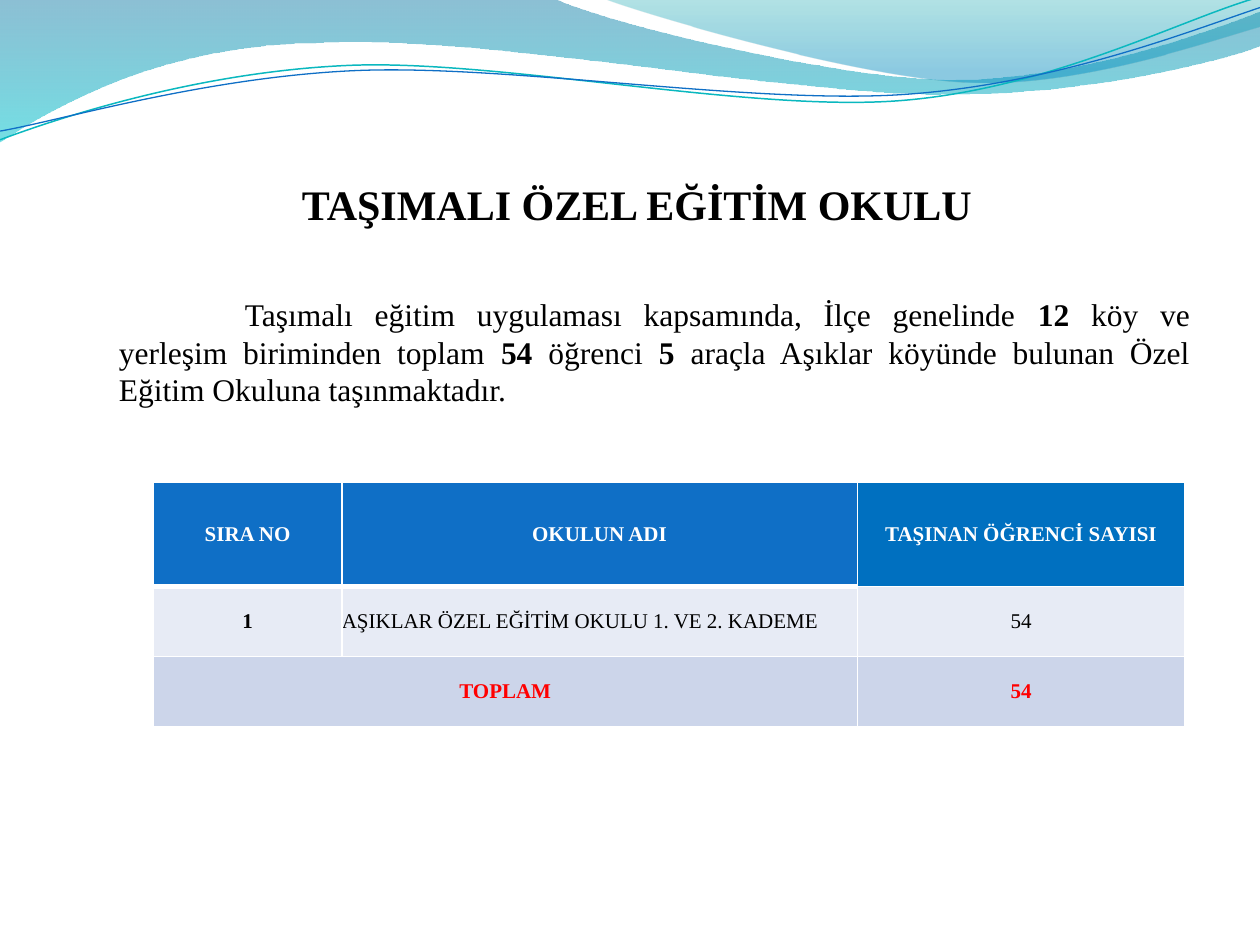
from lxml import etree
from pptx import Presentation
from pptx import util as u
from pptx.dml.color import RGBColor
from pptx.enum import text
from pptx.oxml.ns import qn

FONT = "Times New Roman"
BLACK = RGBColor(0, 0, 0)
WHITE = RGBColor(255, 255, 255)
RED = RGBColor(255, 0, 0)
TEAL = RGBColor(0x0A, 0xB8, 0xBF)
BLUE = RGBColor(0x0F, 0x6F, 0xC6)
ACCENT = RGBColor(0x00, 0x70, 0xC0)
PALE = RGBColor(0xE7, 0xEB, 0xF5)
LILAC = RGBColor(0xCC, 0xD5, 0xEA)
BAND_STOPS = [(0, RGBColor(0, 0x74, 0xA1), 45), (1, RGBColor(0, 0xC6, 0xCF), 55)]
CREST_STOPS = [(0, RGBColor(0, 0xA1, 0xA9), 30), (0.8, RGBColor(0, 0x8B, 0xBF), 45)]

BAND = [(0, -0.7), (316.8, -0.7), (342.7, 12.2, 478.1, 45.4, 545.8, 45.4),
        (614.2, 45.4, 689.8, 18.7, 720, 6.5), (720.7, 25.9),
        (707.8, 31.7, 626.4, 54.7, 537.1, 54), (447.8, 54, 275, 20.2, 185, 24.5),
        (92.9, 25.2, 33.1, 59.8, -0.7, 81.4)]
CREST = [(344.9, -0.7), (366.5, 7.9, 491, 44.6, 553.7, 46.8),
         (616.3, 49.7, 691.9, 23, 720, 15.1), (720, 0)]
TEAL_CURVE = [(0, 79.9), (34.6, 67, 113.8, 41, 199.4, 37.4),
              (284.4, 33.8, 427, 64.1, 513.4, 57.6), (599.8, 51.1, 675.4, 10.8, 718.6, -1.4)]
BLUE_CURVE = [(0, 74.9), (33.8, 69.1, 118.1, 43.9, 203.8, 40.3),
              (290.2, 36.7, 429.8, 59.8, 516.2, 54), (601.9, 48.2, 675.4, 19.4, 720, 4.3)]


def add_outline(page, segments, close):
    """Add a freeform of straight lines (2 numbers) and cubic curves (6 numbers)."""
    points = [(u.Pt(x), u.Pt(y)) for segment in segments
              for x, y in zip(segment[::2], segment[1::2])]
    builder = page.shapes.build_freeform(*points[0], scale=1.0)
    builder.add_line_segments(points[1:], close=close)
    shape = builder.convert_to_shape()
    shape.shadow.inherit = False
    lines = iter(list(shape._element.spPr.iter(qn("a:lnTo"))))
    for segment in segments[1:]:
        first = next(lines)
        if len(segment) == 6:
            first.tag = qn("a:cubicBezTo")
            for line in (next(lines), next(lines)):
                first.append(line[0])
                line.getparent().remove(line)
    return shape


def add_wave(page, segments, stops):
    """Add a closed wave with a translucent vertical gradient."""
    shape = add_outline(page, segments, True)
    shape.line.fill.background()
    shape.fill.gradient()
    shape.fill.gradient_angle = 270
    for stop, (position, color, _) in zip(shape.fill.gradient_stops, stops):
        stop.position = position
        stop.color.rgb = color
    colors = shape._element.spPr.iter(qn("a:srgbClr"))
    for element, (_, _, opacity) in zip(colors, stops):
        etree.SubElement(element, qn("a:alpha"), val=str(opacity * 1000))


def add_curve(page, segments, color, width):
    """Add an open curved line."""
    shape = add_outline(page, segments, False)
    shape.fill.background()
    shape.line.color.rgb = color
    shape.line.width = u.Pt(width)


def format_font(font, size, color=BLACK, bold=None):
    """Set the typeface, size, colour and weight of a font."""
    font.name = FONT
    font.size = u.Pt(size)
    font.color.rgb = color
    font.bold = bold


def clear_margins(target):
    """Remove the inner margins of a text frame or cell."""
    target.margin_left = target.margin_right = 0
    target.margin_top = target.margin_bottom = 0


def set_title(page, wording):
    """Place and format the slide title."""
    title = page.shapes.title
    title.left, title.top = u.Pt(44), u.Pt(99.3)
    title.width, title.height = u.Pt(640), u.Pt(34)
    frame = title.text_frame
    frame.text = wording
    frame.vertical_anchor = text.MSO_ANCHOR.MIDDLE
    clear_margins(frame)
    para = frame.paragraphs[0]
    para.alignment = text.PP_ALIGN.CENTER
    format_font(para.font, 24, bold=True)


def add_body(page, spans):
    """Add the justified paragraph from spans of wording and weight."""
    box = page.shapes.add_textbox(u.Pt(68), u.Pt(168.5), u.Pt(612), u.Pt(66))
    frame = box.text_frame
    frame.word_wrap = True
    clear_margins(frame)
    para = frame.paragraphs[0]
    para.alignment = text.PP_ALIGN.JUSTIFY
    para._p.get_or_add_pPr().set("indent", str(u.Pt(72)))
    format_font(para.font, 18)
    for wording, bold in spans:
        span = para.add_run()
        span.text = wording
        span.font.bold = bold


def set_borders(cell, top, bottom):
    """Draw white borders around a cell."""
    properties = cell._tc.get_or_add_tcPr()
    for side, width in (("L", 1), ("R", 1), ("T", top), ("B", bottom)):
        line = etree.SubElement(properties, qn(f"a:ln{side}"), w=str(u.Pt(width)))
        fill = etree.SubElement(line, qn("a:solidFill"))
        etree.SubElement(fill, qn("a:srgbClr"), val=str(WHITE))


def fill_cell(cell, wording, fill, color, bold, align):
    """Write and format one table cell."""
    cell.fill.solid()
    cell.fill.fore_color.rgb = fill
    cell.vertical_anchor = text.MSO_ANCHOR.MIDDLE
    clear_margins(cell)
    cell.text = wording
    para = cell.text_frame.paragraphs[0]
    para.alignment = align
    format_font(para.font, 12, color, bold)


def add_school_table(page):
    """Add the table of schools and transported students."""
    center, left = text.PP_ALIGN.CENTER, text.PP_ALIGN.LEFT
    rows = [
        [("SIRA NO", BLUE, WHITE, True, center), ("OKULUN ADI", BLUE, WHITE, True, center),
         ("TAŞINAN ÖĞRENCİ SAYISI", ACCENT, WHITE, True, center)],
        [("1", PALE, BLACK, True, center),
         ("AŞIKLAR ÖZEL EĞİTİM OKULU 1. VE 2. KADEME", PALE, BLACK, False, left),
         ("54", PALE, BLACK, False, center)],
        [("TOPLAM", LILAC, RED, True, center), ("", LILAC, RED, True, center),
         ("54", LILAC, RED, True, center)],
    ]
    widths, heights = (107.8, 294.5, 187.3), (59.6, 40, 40)
    table = page.shapes.add_table(3, 3, u.Pt(87.6), u.Pt(275.7), u.Pt(sum(widths)),
                                  u.Pt(sum(heights))).table
    for column, width in zip(table.columns, widths):
        column.width = u.Pt(width)
    for r, (row, height) in enumerate(zip(rows, heights)):
        table.rows[r].height = u.Pt(height)
        for c, content in enumerate(row):
            cell = table.cell(r, c)
            rule = 3 if c < 2 else 1
            set_borders(cell, rule if r == 1 else 1, rule if r == 0 else 1)
            fill_cell(cell, *content)
    table.cell(2, 0).merge(table.cell(2, 1))


def main():
    """Build the slide and save the deck."""
    deck = Presentation()
    deck.slide_width, deck.slide_height = u.Pt(720), u.Pt(540)
    page = deck.slides.add_slide(deck.slide_layouts[5])
    add_wave(page, BAND, BAND_STOPS)
    add_wave(page, CREST, CREST_STOPS)
    add_curve(page, TEAL_CURVE, TEAL, 0.85)
    add_curve(page, BLUE_CURVE, BLUE, 0.75)
    set_title(page, "TAŞIMALI ÖZEL EĞİTİM OKULU")
    add_body(page, [
        ("Taşımalı eğitim uygulaması kapsamında, İlçe genelinde ", False), ("12", True),
        (" köy ve yerleşim biriminden toplam ", False), ("54", True),
        (" öğrenci ", False), ("5", True),
        (" araçla Aşıklar köyünde bulunan Özel Eğitim Okuluna taşınmaktadır.", False)])
    add_school_table(page)
    deck.save("out.pptx")


if __name__ == "__main__":
    main()
